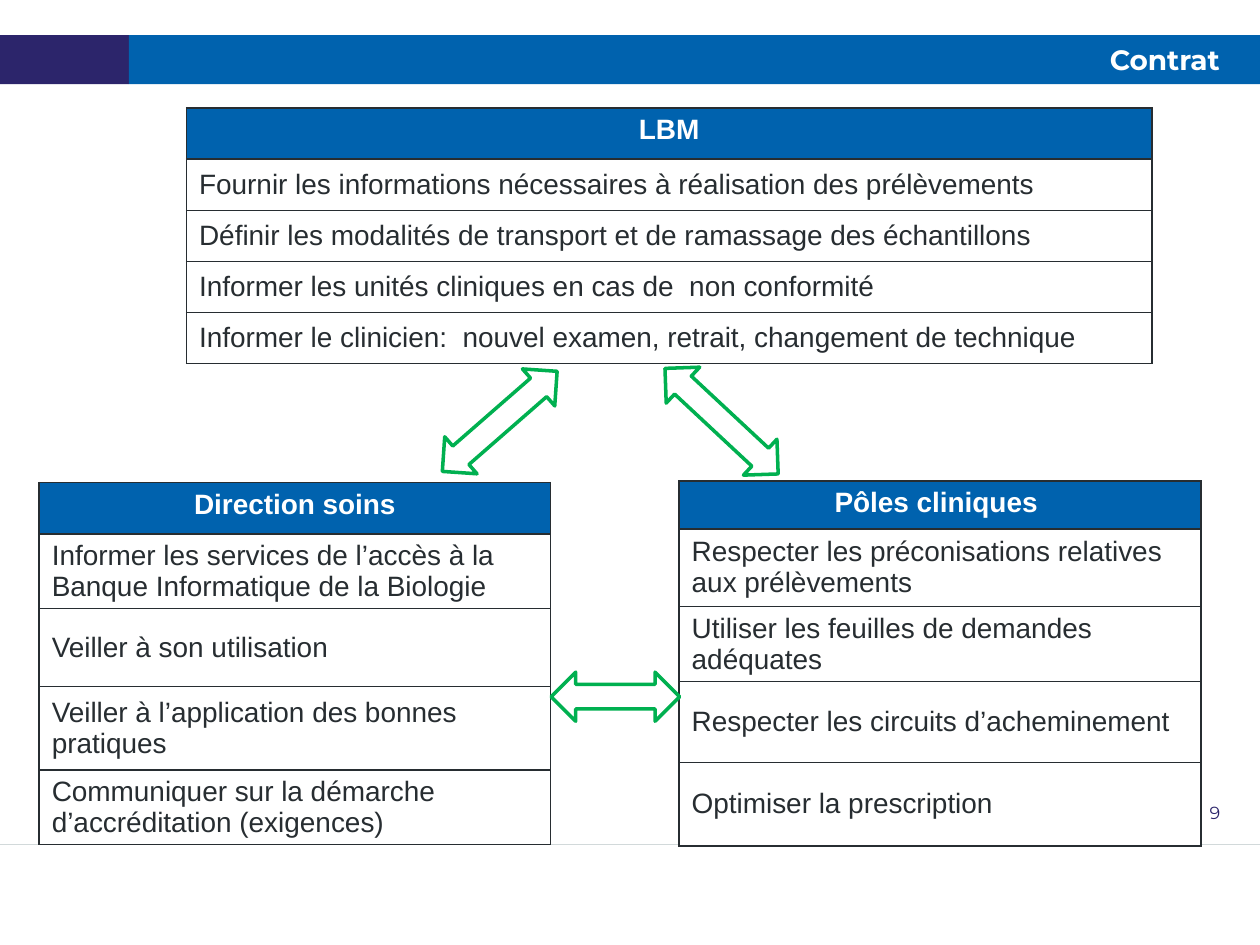
import pptx
import pptx.util
import pptx.oxml
import pptx.oxml.ns
from pptx.dml.color import RGBColor
from pptx.enum.shapes import MSO_CONNECTOR, MSO_SHAPE
from pptx.enum.text import MSO_ANCHOR, MSO_AUTO_SIZE, PP_ALIGN
from pptx.util import Cm, Pt

BLUE = RGBColor(0x00, 0x62, 0xAE)
PURPLE = RGBColor(0x2C, 0x25, 0x6B)
GREEN = RGBColor(0x00, 0xB0, 0x50)
DARK = RGBColor(0x27, 0x2D, 0x31)
GREY = RGBColor(0xD2, 0xD9, 0xDA)
WHITE = RGBColor(0xFF, 0xFF, 0xFF)

# Content: lengths in centimetres
TITLE = "Contrat"
PAGE_NUMBER = "9"
TABLES = [
    {"place": (3.76, 2.18, 19.46), "heights": [1.03] * 5, "rows": [
        "LBM",
        "Fournir les informations nécessaires à réalisation des prélèvements",
        "Définir les modalités de transport et de ramassage des échantillons",
        "Informer les unités cliniques en cas de  non conformité",
        "Informer le clinicien:  nouvel examen, retrait, changement de technique"]},
    {"place": (13.69, 9.7, 10.52), "heights": [0.96, 1.57, 1.5, 1.63, 1.69], "rows": [
        "Pôles cliniques ",
        "Respecter les préconisations relatives aux prélèvements",
        "Utiliser les feuilles de demandes adéquates",
        "Respecter les circuits d’acheminement",
        "Optimiser la prescription"]},
    {"place": (0.79, 9.73, 10.31), "heights": [1.03, 1.5, 1.57, 1.68, 1.5], "rows": [
        "Direction soins",
        "Informer les services de l’accès à la Banque Informatique de la Biologie",
        "Veiller à son utilisation",
        "Veiller à l’application des bonnes pratiques",
        "Communiquer sur la démarche d’accréditation (exigences)"]},
]
BANNER = [((0, 0.71, 2.6, 0.99), PURPLE), ((2.6, 0.71, 22.8, 0.99), BLUE)]
ARROWS = [  # place, rotation
    ((9.58, 6.96, 0.99, 3.07), 48.9),
    ((14.05, 6.93, 0.99, 3.12), 133),
    ((11.91, 12.75, 0.99, 2.59), 90),
]

# Formats
HEADER_FONT = {"name": "Arial", "size": Pt(16), "bold": True}
BODY_FONT = {"name": "Arial", "size": Pt(16), "bold": False}
TITLE_FONT = {"name": "Montserrat", "size": Pt(16), "bold": True}
NUMBER_FONT = {"name": "Montserrat", "size": Pt(10), "bold": False}
TIGHT_FRAME = {"margin_left": 0, "margin_top": 0, "margin_right": 0, "margin_bottom": 0,
               "word_wrap": True, "auto_size": MSO_AUTO_SIZE.NONE,
               "vertical_anchor": MSO_ANCHOR.MIDDLE}


def apply(target, formats):
    for name, value in formats.items():
        setattr(target, name, value)


def lengths(values):
    return [Cm(value) for value in values]


def write(frame, text, align, font, color):
    para = frame.paragraphs[0]
    para.alignment = align
    span = para.add_run()
    span.text = text
    apply(span.font, font)
    span.font.color.rgb = color


def add_plain_shape(page, kind, place, fill):
    shape = page.shapes.add_shape(kind, *lengths(place))
    shape.shadow.inherit = False
    shape.fill.solid()
    shape.fill.fore_color.rgb = fill
    shape.line.fill.background()
    return shape


def add_borders(cell):
    properties = cell._tc.get_or_add_tcPr()
    for side in ("lnL", "lnR", "lnT", "lnB"):
        properties.append(pptx.oxml.parse_xml(
            f'<a:{side} {pptx.oxml.ns.nsdecls("a")} w="{Pt(1)}"><a:solidFill>'
            f'<a:srgbClr val="{DARK}"/></a:solidFill></a:{side}>'))


def add_role_table(page, place, heights, rows):
    left, top, width = lengths(place)
    table = page.shapes.add_table(len(rows), 1, left, top, width, Cm(sum(heights))).table
    table.horz_banding = False
    for index, (text, height) in enumerate(zip(rows, heights)):
        table.rows[index].height = Cm(height)
        cell = table.cell(index, 0)
        add_borders(cell)
        cell.fill.solid()
        if index == 0:
            cell.fill.fore_color.rgb = BLUE
            write(cell.text_frame, text, PP_ALIGN.CENTER, HEADER_FONT, WHITE)
        else:
            cell.fill.fore_color.rgb = WHITE
            cell.vertical_anchor = MSO_ANCHOR.MIDDLE
            write(cell.text_frame, text, PP_ALIGN.LEFT, BODY_FONT, DARK)


def main():
    deck = pptx.Presentation()
    deck.slide_width, deck.slide_height = Cm(25.4), Cm(19.05)
    page = deck.slides.add_slide(deck.slide_layouts[5])
    title = page.shapes.title

    # Banner and footer rule
    for place, color in BANNER:
        add_plain_shape(page, MSO_SHAPE.RECTANGLE, place, color)
    rule = page.shapes.add_connector(MSO_CONNECTOR.STRAIGHT, *lengths((0, 17.02, 25.4, 17.02)))
    rule.line.color.rgb = GREY
    rule.line.width = Pt(0.75)
    rule._element.spPr.append(pptx.oxml.parse_xml(
        f'<a:effectLst {pptx.oxml.ns.nsdecls("a")}/>'))

    # Title, moved in front of the banner, and page number
    page.shapes._spTree.append(title._element)
    apply(title, dict(zip(("left", "top", "width", "height"),
                          lengths((2.79, 0.71, 21.8, 0.99)))))
    number = page.shapes.add_textbox(*lengths((22.7, 15.72, 1.9, 1.3)))
    for box, text, font, color in ((title, TITLE, TITLE_FONT, WHITE),
                                   (number, PAGE_NUMBER, NUMBER_FONT, PURPLE)):
        apply(box.text_frame, TIGHT_FRAME)
        write(box.text_frame, text, PP_ALIGN.RIGHT, font, color)

    # Role tables
    for table in TABLES:
        add_role_table(page, **table)

    # Arrows between the roles
    for place, rotation in ARROWS:
        arrow = add_plain_shape(page, MSO_SHAPE.UP_DOWN_ARROW, place, WHITE)
        arrow.rotation = rotation
        arrow.line.color.rgb = GREEN
        arrow.line.width = Pt(2)

    deck.save("out.pptx")


if __name__ == "__main__":
    main()
